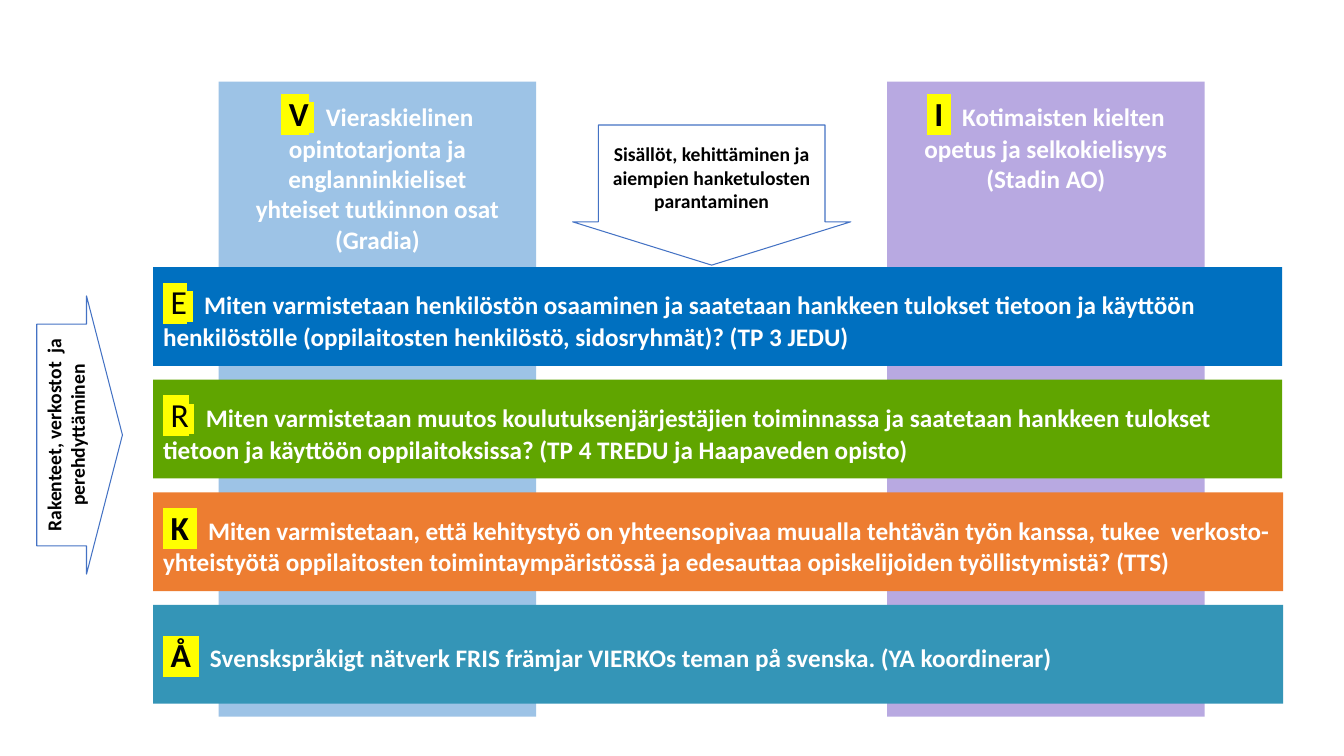
from dataclasses import dataclass

import pptx
import pptx.dml.color
import pptx.enum.shapes
import pptx.enum.text
import pptx.oxml
import pptx.oxml.ns
import pptx.util

Pt = pptx.util.Pt
RGB = pptx.dml.color.RGBColor.from_string
SHAPE = pptx.enum.shapes.MSO_SHAPE
ALIGN = pptx.enum.text.PP_ALIGN
ANCHOR = pptx.enum.text.MSO_ANCHOR


@dataclass(frozen=True)
class Theme:
    font: str = "Calibri"
    letter_size: int = 24
    body_size: int = 18
    arrow_size: int = 14
    dark: str = "000000"
    light: str = "FFFFFF"
    marker: str = "FFFF00"
    outline: str = "4472C4"
    light_blue: str = "9DC3E6"
    lilac: str = "B8A9E1"
    blue: str = "0070C0"
    green: str = "60A500"
    orange: str = "ED7D31"
    teal: str = "3495B7"


def add_text(p, text, font, size, color, bold=True, highlight=None):
    r = p.add_run()
    r.text = text
    r.font.name = font
    r.font.size = Pt(size)
    r.font.bold = bold
    r.font.color.rgb = RGB(color)
    if highlight:
        mark = pptx.oxml.parse_xml(
            f'<a:highlight {pptx.oxml.ns.nsdecls("a")}>'
            f'<a:srgbClr val="{highlight}"/></a:highlight>')
        fill = r.font._element.find(pptx.oxml.ns.qn("a:solidFill"))
        fill.addnext(mark)


class Board:
    """Draws the elements of one slide in one theme."""

    def __init__(self, s, theme):
        self.s = s
        self.theme = theme

    def shape(self, kind, left, top, width, height, fill=None):
        sp = self.s.shapes.add_shape(
            kind, Pt(left), Pt(top), Pt(width), Pt(height))
        sp.shadow.inherit = False
        if fill:
            sp.fill.solid()
            sp.fill.fore_color.rgb = RGB(fill)
            sp.line.fill.background()
        else:
            sp.fill.background()
            sp.line.color.rgb = RGB(self.theme.outline)
            sp.line.width = Pt(0.75)
        sp.text_frame.word_wrap = True
        sp.text_frame.vertical_anchor = ANCHOR.MIDDLE
        return sp

    def letter(self, p, letter, bold, padded):
        """Highlighted letter; its closing space is large or body-sized."""
        t = self.theme
        add_text(p, f" {letter} " if padded else f" {letter}", t.font,
                 t.letter_size, t.dark, bold, t.marker)
        if not padded:
            add_text(p, " ", t.font, t.body_size, t.light,
                     highlight=t.marker)

    def panel(self, box, fill, letter, lines, align=ALIGN.LEFT,
              bold=True, padded=True):
        t = self.theme
        tf = self.shape(SHAPE.RECTANGLE, *box, fill).text_frame
        for i, line in enumerate(lines):
            p = tf.add_paragraph() if i else tf.paragraphs[0]
            p.alignment = align
            if i == 0:
                self.letter(p, letter, bold, padded)
                line = "  " + line
            add_text(p, line, t.font, t.body_size, t.light)
        return tf

    def column(self, left, fill, letter, lines, padded):
        tf = self.panel((left, 58.3, 226.8, 453.6), fill, letter, lines,
                        ALIGN.CENTER, padded=padded)
        tf.vertical_anchor = ANCHOR.TOP
        tf.margin_top = Pt(8)

    def arrow(self, box, shaft, head, text, rotation=0):
        t = self.theme
        sp = self.shape(SHAPE.DOWN_ARROW, *box)
        sp.adjustments[0] = shaft
        sp.adjustments[1] = head
        sp.rotation = rotation
        p = sp.text_frame.paragraphs[0]
        p.alignment = ALIGN.CENTER
        add_text(p, text, t.font, t.arrow_size, t.dark)


def main():
    prs = pptx.Presentation()
    prs.slide_width, prs.slide_height = Pt(960), Pt(540)
    theme = Theme()
    board = Board(prs.slides.add_slide(prs.slide_layouts[6]), theme)

    board.column(156.2, theme.light_blue, "V", [
        "Vieraskielinen opintotarjonta ja englanninkieliset",
        "yhteiset tutkinnon osat (Gradia)"], padded=False)
    board.column(633.6, theme.lilac, "I", [
        "Kotimaisten kielten opetus ja selkokielisyys",
        "(Stadin AO)"], padded=True)

    bars = [
        (theme.blue, "E", False, 806.4,
         "Miten varmistetaan henkilöstön osaaminen ja saatetaan hankkeen "
         "tulokset tietoon ja käyttöön henkilöstölle (oppilaitosten "
         "henkilöstö, sidosryhmät)? (TP 3 JEDU)"),
        (theme.green, "R", False, 806.4,
         "Miten varmistetaan muutos koulutuksenjärjestäjien toiminnassa ja "
         "saatetaan hankkeen tulokset tietoon ja käyttöön oppilaitoksissa? "
         "(TP 4 TREDU ja Haapaveden opisto)"),
        (theme.orange, "K", True, 807.1,
         "Miten varmistetaan, että kehitystyö on yhteensopivaa muualla "
         "tehtävän työn kanssa, tukee  verkosto-yhteistyötä oppilaitosten "
         "toimintaympäristössä ja edesauttaa opiskelijoiden "
         "työllistymistä? (TTS)"),
        (theme.teal, "Å", True, 807.1,
         "Svenskspråkigt nätverk FRIS främjar VIERKOs teman på svenska. "
         "(YA koordinerar)"),
    ]
    for i, (fill, letter, strong, width, text) in enumerate(bars):
        board.panel((109.4, 190.8 + i * 80.4, width, 70.6), fill, letter,
                    [text], bold=strong, padded=strong)

    board.arrow((409, 89.3, 198.7, 100.1), 0.815, 0.309,
                "Sisällöt, kehittäminen ja aiempien hanketulosten "
                "parantaminen")
    board.arrow((-42.5, 280.1, 198.7, 61.2), 0.797, 0.419,
                "Rakenteet, verkostot  ja perehdyttäminen", rotation=270)

    prs.save("out.pptx")


if __name__ == "__main__":
    main()
